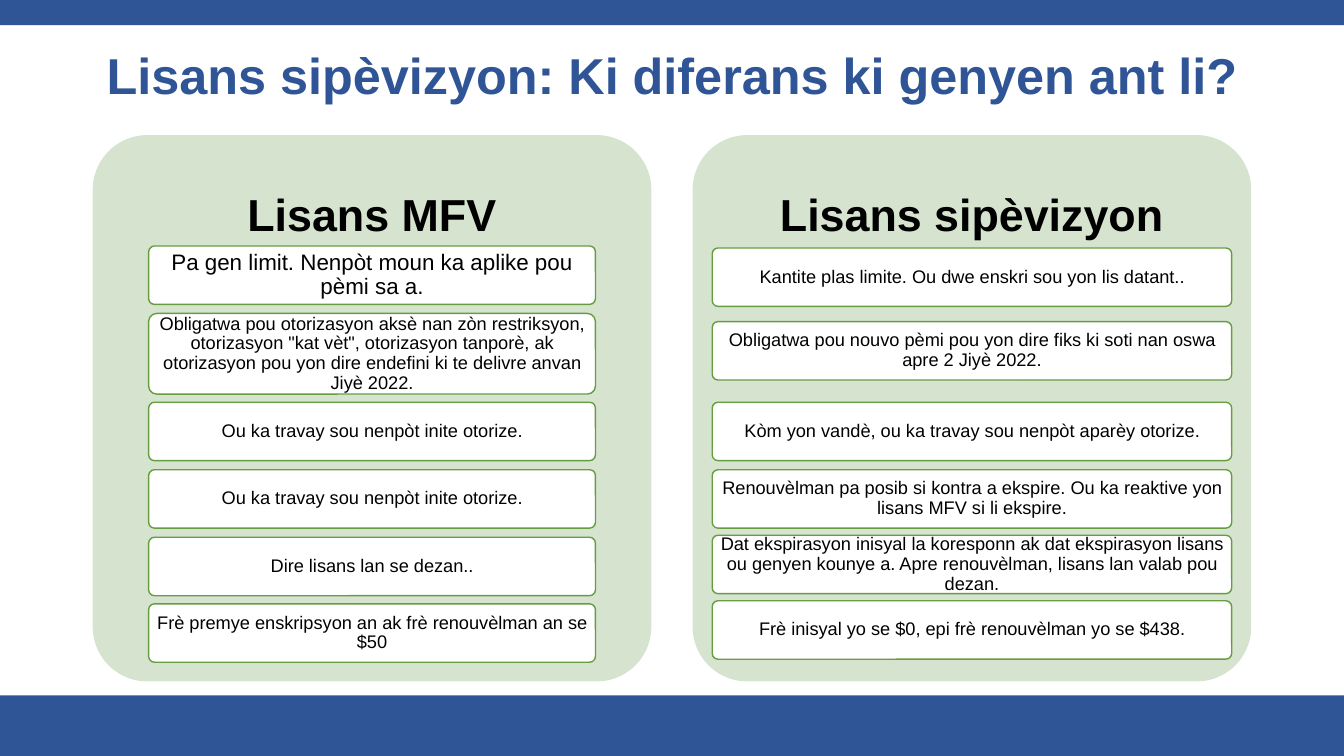
"""Build the slide that compares the two kinds of licence."""
from pptx import Presentation
from pptx.dml.color import RGBColor as Rgb
from pptx.enum.shapes import MSO_SHAPE as Kind
from pptx.enum.text import MSO_ANCHOR as Anchor, PP_ALIGN as Align
from pptx.util import Inches as In, Pt

TITLE = "Lisans sipèvizyon: Ki diferans ki genyen ant li?"
# Each card: gap above, height, text size, text
PANELS = [
    ("Lisans MFV", 0.8, 2.44, [
        (0, 0.58, 16, "Pa gen limit. Nenpòt moun ka aplike pou pèmi sa a."),
        (0.09, 0.8, 13, "Obligatwa pou otorizasyon aksè nan zòn restriksyon, "
         "otorizasyon \"kat vèt\", otorizasyon tanporè, ak otorizasyon pou yon "
         "dire endefini ki te delivre anvan Jiyè 2022."),
        (0.08, 0.58, 13, "Ou ka travay sou nenpòt inite otorize."),
        (0.09, 0.58, 13, "Ou ka travay sou nenpòt inite otorize."),
        (0.09, 0.58, 13, "Dire lisans lan se dezan.."),
        (0.08, 0.58, 13, "Frè premye enskripsyon an ak frè renouvèlman an se $50"),
    ]),
    ("Lisans sipèvizyon", 0.93, 2.46, [
        (0, 0.58, 13, "Kantite plas limite. Ou dwe enskri sou yon lis datant.."),
        (0.15, 0.58, 13, "Obligatwa pou nouvo pèmi pou yon dire fiks ki soti nan "
         "oswa apre 2 Jiyè 2022."),
        (0.22, 0.58, 13, "Kòm yon vandè, ou ka travay sou nenpòt aparèy otorize."),
        (0.09, 0.58, 13, "Renouvèlman pa posib si kontra a ekspire. Ou ka reaktive "
         "yon lisans MFV si li ekspire."),
        (0.07, 0.58, 13, "Dat ekspirasyon inisyal la koresponn ak dat ekspirasyon "
         "lisans ou genyen kounye a. Apre renouvèlman, lisans lan valab pou dezan."),
        (0.07, 0.58, 13, "Frè inisyal yo se $0, epi frè renouvèlman yo se $438."),
    ]),
]
COLORS = {"blue": "2F5597", "panel": "D5E3CF", "card": "FFFFFF",
          "edge": "669D40", "text": "000000"}
WIDE, HIGH = 13.33, 7.5
LEFT, TOP, PITCH = 0.92, 1.34, 5.95
PANEL_W, PANEL_H = 5.54, 5.42


def color(name):
    return Rgb.from_string(COLORS[name])


def add_box(slide, kind, at, fill, edge=None):
    box = slide.shapes.add_shape(kind, *map(In, at))
    box.shadow.inherit = False
    box.fill.solid()
    box.fill.fore_color.rgb = color(fill)
    if edge:
        box.line.color.rgb = color(edge)
        box.line.width = Pt(1)
    else:
        box.line.fill.background()
    if kind == Kind.ROUNDED_RECTANGLE:
        box.adjustments[0] = 0.1
    return box


def write(box, text, size, ink="text", bold=False, pads=None):
    frame = box.text_frame
    frame.text = text
    frame.word_wrap = True
    frame.vertical_anchor = Anchor.MIDDLE
    if pads:
        (frame.margin_left, frame.margin_top,
         frame.margin_right, frame.margin_bottom) = map(In, pads)
    para = frame.paragraphs[0]
    para.alignment = Align.CENTER
    para.line_spacing = 0.9
    font = para.font
    font.name, font.size, font.bold = "Arial", Pt(size), bold
    font.color.rgb = color(ink)


def add_panel(slide, col, head, share, y, cards):
    x = LEFT + col * PITCH
    panel = add_box(slide, Kind.ROUNDED_RECTANGLE, (x, TOP, PANEL_W, PANEL_H), "panel")
    write(panel, head, 32, bold=True, pads=(0, 0, 0, 3.8))
    wide = PANEL_W * share
    x += (PANEL_W - wide) / 2
    for gap, high, size, text in cards:
        y += gap
        card = add_box(slide, Kind.ROUNDED_RECTANGLE, (x, y, wide, high), "card", "edge")
        write(card, text, size, pads=(0.04, 0.03, 0.04, 0.03))
        y += high


def main():
    deck = Presentation()
    deck.slide_width, deck.slide_height = In(WIDE), In(HIGH)
    slide = deck.slides.add_slide(deck.slide_layouts[5])
    for y, high in ((0, 0.25), (6.9, 0.6)):
        add_box(slide, Kind.RECTANGLE, (0, y, WIDE, high), "blue")
    title = slide.shapes.title
    title.left, title.top, title.width, title.height = map(In, (LEFT, 0.4, 11.5, 0.75))
    write(title, TITLE, 36, "blue", True)
    for col, panel in enumerate(PANELS):
        add_panel(slide, col, *panel)
    deck.save("out.pptx")


if __name__ == "__main__":
    main()
